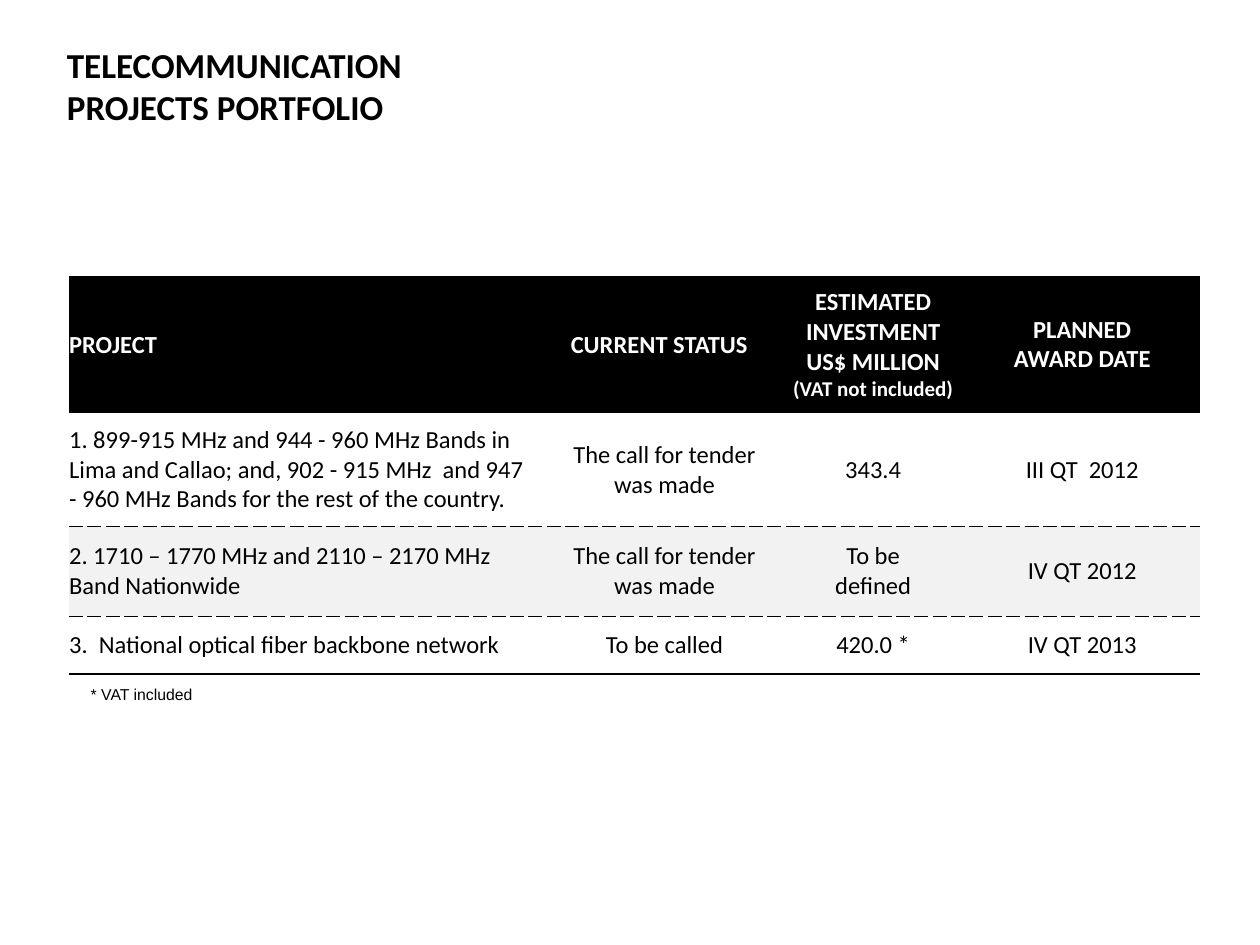
"""Build the telecommunication projects portfolio slide."""
from lxml import etree
from pptx import Presentation
from pptx import util as u
from pptx.dml.color import RGBColor
from pptx.enum import text
from pptx.oxml.ns import qn

BLACK, WHITE, GREY = "000000", "FFFFFF", "F2F2F2"
PLAIN_TABLE = "{2D5ABB26-0587-4C30-8999-92F81FD0307C}"
COLUMN_WIDTHS = [267, 140.5, 104, 135]
ROW_HEIGHTS = [78.5, 64.5, 51.5, 33]
STATUS_COLUMN = 1
STATUS_INDENT = 6
ROWS = [
    ["PROJECT", "CURRENT STATUS",
     "ESTIMATED INVESTMENT\nUS$ MILLION\n(VAT not included)",
     "PLANNED\nAWARD DATE"],
    ["1. 899-915 MHz and 944 - 960 MHz Bands in Lima and Callao; and, "
     "902 - 915 MHz  and 947 - 960 MHz Bands for the rest of the country.",
     "The call for tender\vwas made", "343.4", "III QT  2012"],
    ["2. 1710 – 1770 MHz and 2110 – 2170 MHz Band Nationwide",
     "The call for tender\vwas made", "To be\vdefined", "IV QT 2012"],
    ["3.  National optical fiber backbone network",
     "To be called", "420.0 *", "IV QT 2013"],
]
ROW_FILLS = [BLACK, None, GREY, None]
DASHED, SOLID = (0.5, "sysDash"), (1, "solid")
ROW_BORDERS = [{}, {"lnB": DASHED}, {"lnT": DASHED, "lnB": DASHED},
               {"lnT": DASHED, "lnB": SOLID}]


def color(value):
    """Return the colour for a hex string."""
    return RGBColor.from_string(value)


def apply_format(target, values):
    """Set each named attribute of the target."""
    for name, value in values.items():
        setattr(target, name, value)


def format_font(font, size, name="Calibri", bold=False, fill=BLACK):
    """Give a font its size, family, weight and colour."""
    apply_format(font, {"size": u.Pt(size), "name": name, "bold": bold})
    font.color.rgb = color(fill)


def write_text(shape, box, content, **font_values):
    """Place a text shape and write one formatted paragraph in it."""
    left, top, width, height = (u.Pt(value) for value in box)
    apply_format(shape, {"left": left, "top": top,
                         "width": width, "height": height})
    apply_format(shape.text_frame, {
        "text": content, "word_wrap": True,
        "auto_size": text.MSO_AUTO_SIZE.SHAPE_TO_FIT_TEXT,
        "vertical_anchor": text.MSO_ANCHOR.TOP})
    paragraph = shape.text_frame.paragraphs[0]
    paragraph.alignment = text.PP_ALIGN.LEFT
    format_font(paragraph.font, **font_values)


def add_border(cell, side, width, dash):
    """Draw one black border of a cell."""
    properties = cell._tc.get_or_add_tcPr()
    line = etree.SubElement(properties, qn(f"a:{side}"), w=str(u.Pt(width)))
    solid = etree.SubElement(line, qn("a:solidFill"))
    etree.SubElement(solid, qn("a:srgbClr"), val=BLACK)
    etree.SubElement(line, qn("a:prstDash"), val=dash)


def fill_cell(cell, content, row, column):
    """Write and format a cell according to its row and column."""
    margins = dict.fromkeys(
        ["margin_left", "margin_right", "margin_top", "margin_bottom"], 0)
    apply_format(cell, {"text": content, **margins,
                        "vertical_anchor": text.MSO_ANCHOR.MIDDLE})
    for side, (width, dash) in ROW_BORDERS[row].items():
        add_border(cell, side, width, dash)
    if ROW_FILLS[row]:
        cell.fill.solid()
        cell.fill.fore_color.rgb = color(ROW_FILLS[row])
    else:
        cell.fill.background()
    header = row == 0
    for paragraph in cell.text_frame.paragraphs:
        if column:
            paragraph.alignment = text.PP_ALIGN.CENTER
        if column == STATUS_COLUMN and not header:
            properties = paragraph._p.get_or_add_pPr()
            properties.set("marL", str(u.Pt(STATUS_INDENT)))
        size = 12 if paragraph.text.startswith("(") else 14
        for run in paragraph.runs:
            format_font(run.font, size, bold=header,
                        fill=WHITE if header else BLACK)


def add_projects_table(slide):
    """Add the table of projects."""
    frame = slide.shapes.add_table(
        len(ROWS), len(COLUMN_WIDTHS), u.Pt(39.5), u.Pt(157.7),
        u.Pt(sum(COLUMN_WIDTHS)), u.Pt(sum(ROW_HEIGHTS)))
    table = frame.table
    table.horz_banding = False
    table._tbl.tblPr.find(qn("a:tableStyleId")).text = PLAIN_TABLE
    for column, width in zip(table.columns, COLUMN_WIDTHS):
        column.width = u.Pt(width)
    for row, height in zip(table.rows, ROW_HEIGHTS):
        row.height = u.Pt(height)
    for row, contents in enumerate(ROWS):
        for column, content in enumerate(contents):
            fill_cell(table.cell(row, column), content, row, column)


def main():
    """Create and save the presentation."""
    presentation = Presentation()
    apply_format(presentation, {"slide_width": u.Pt(720),
                                "slide_height": u.Pt(540)})
    slide = presentation.slides.add_slide(presentation.slide_layouts[5])
    add_projects_table(slide)
    write_text(slide.shapes.title, (31, 21, 252, 55.5),
               "TELECOMMUNICATION PROJECTS PORTFOLIO", size=20, bold=True)
    write_text(slide.shapes.add_textbox(0, 0, 0, 0), (44.8, 388, 304, 18),
               "* VAT included", size=9, name="Arial")
    presentation.save("out.pptx")


if __name__ == "__main__":
    main()
